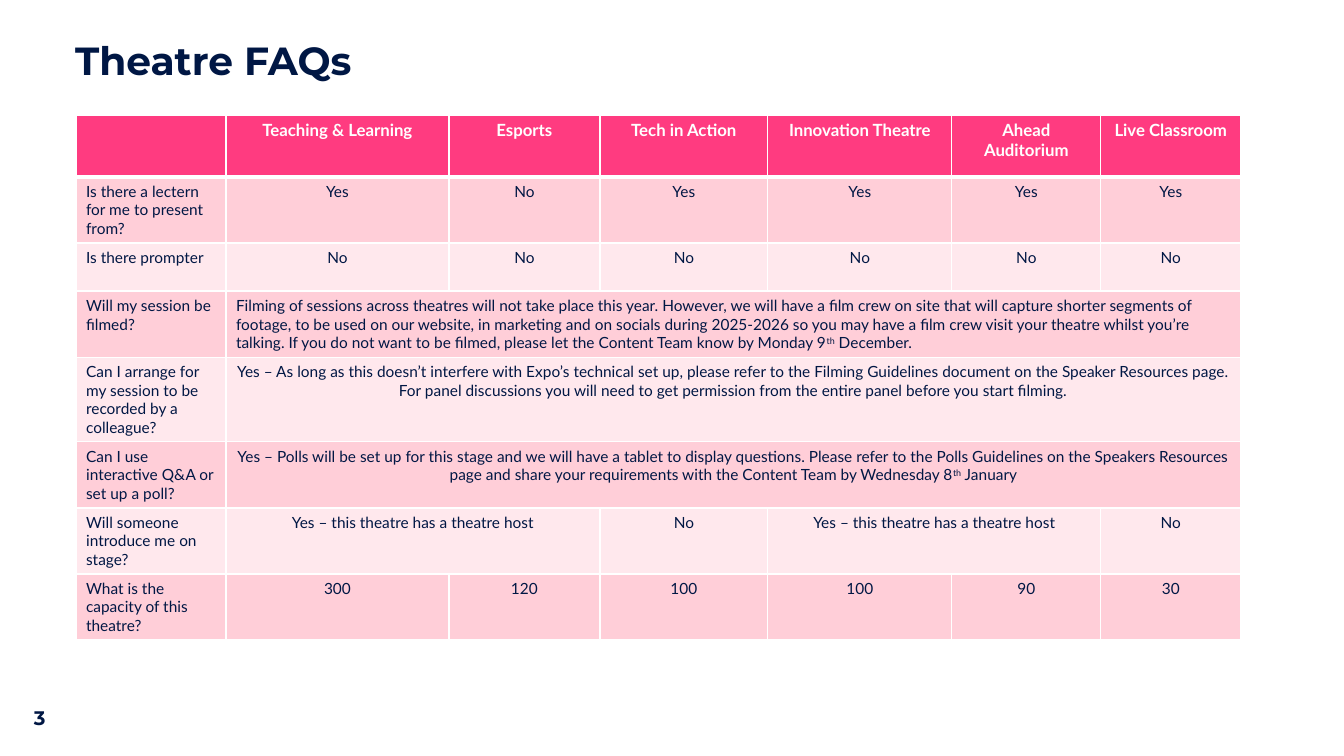
"""Build the Theatre FAQs slide with its table of theatre facilities."""
from dataclasses import dataclass

import lxml.etree
import pptx
import pptx.dml.color
import pptx.enum.text
import pptx.oxml.ns
import pptx.util

PX = 914400 / 100.8
COLORS = {
    "navy": "001744",
    "white": "FFFFFF",
    "header": "FF3B80",
    "odd": "FFCED8",
    "even": "FFE8ED",
}
LEFT = pptx.enum.text.PP_ALIGN.LEFT
CENTER = pptx.enum.text.PP_ALIGN.CENTER
COLUMN_WIDTHS = [150, 223, 151, 168, 184, 149, 140]
HOST = "Yes – this theatre has a theatre host"


@dataclass
class Answer:
    text: str
    span: int = 1
    align: pptx.enum.text.PP_ALIGN = CENTER


@dataclass
class Row:
    height: int
    label: str
    answers: list[Answer]


def singles(*texts: str) -> list[Answer]:
    return [Answer(text) for text in texts]


ROWS = [
    Row(62, "", singles("Teaching & Learning", "Esports", "Tech in Action",
                        "Innovation Theatre", "Ahead Auditorium", "Live Classroom")),
    Row(66, "Is there a lectern for me to present from?",
        singles("Yes", "No", "Yes", "Yes", "Yes", "Yes")),
    Row(48, "Is there prompter", singles(*["No"] * 6)),
    Row(64, "Will my session be filmed?", [Answer(
        "Filming of sessions across theatres will not take place this year. However, "
        "we will have a film crew on site that will capture shorter segments of footage, "
        "to be used on our website, in marketing and on socials during 2025-2026 so you "
        "may have a film crew visit your theatre whilst you’re talking. If you do not want "
        "to be filmed, please let the Content Team know by Monday 9^th^ December.", 6, LEFT)]),
    Row(84, "Can I arrange for my session to be recorded by a colleague?", [Answer(
        "Yes – As long as this doesn’t interfere with Expo’s technical set up, please refer "
        "to the Filming Guidelines document on the Speaker Resources page. For panel "
        "discussions you will need to get permission from the entire panel before you "
        "start filming.", 6)]),
    Row(66, "Can I use interactive Q&A or set up a poll?", [Answer(
        "Yes – Polls will be set up for this stage and we will have a tablet to display "
        "questions. Please refer to the Polls Guidelines on the Speakers Resources page and "
        "share your requirements with the Content Team by Wednesday 8^th^ January", 6)]),
    Row(66, "Will someone introduce me on stage?",
        [Answer(HOST, 2), Answer("No"), Answer(HOST, 2), Answer("No")]),
    Row(65, "What is the capacity of this theatre?",
        singles("300", "120", "100", "100", "90", "30")),
]


def px(value: int) -> int:
    return round(value * PX)


def rgb(name: str) -> pptx.dml.color.RGBColor:
    return pptx.dml.color.RGBColor.from_string(COLORS[name])


def write(tf, text: str, *, size: int, font: str = "Lato", color: str = "navy",
          bold: bool = False, align=LEFT, spacing: float | None = None) -> None:
    """Write one paragraph, raising the parts set between carets."""
    p = tf.paragraphs[0]
    p.alignment = align
    if spacing:
        p.line_spacing = spacing
    for i, part in enumerate(text.split("^")):
        r = p.add_run()
        r.text = part
        r.font.name = font
        r.font.size = pptx.util.Pt(size)
        r.font.bold = bold
        r.font.color.rgb = rgb(color)
        if i % 2:
            r.font._element.set("baseline", "30000")


def set_borders(cell, top: int, bottom: int) -> None:
    """Give a cell white borders with the given top and bottom widths in points."""
    tc_pr = cell._tc.get_or_add_tcPr()
    widths = {"a:lnL": 1, "a:lnR": 1, "a:lnT": top, "a:lnB": bottom}
    for i, (tag, width) in enumerate(widths.items()):
        ln = lxml.etree.Element(pptx.oxml.ns.qn(tag), w=str(pptx.util.Pt(width)))
        fill = lxml.etree.SubElement(ln, pptx.oxml.ns.qn("a:solidFill"))
        lxml.etree.SubElement(fill, pptx.oxml.ns.qn("a:srgbClr"), val=COLORS["white"])
        tc_pr.insert(i, ln)


def add_faq_table(s) -> None:
    table = s.shapes.add_table(
        len(ROWS), len(COLUMN_WIDTHS), px(76), px(115),
        px(sum(COLUMN_WIDTHS)), px(sum(row.height for row in ROWS))).table
    table.horz_banding = False
    for column, width in zip(table.columns, COLUMN_WIDTHS):
        column.width = px(width)
    for i, row in enumerate(ROWS):
        table.rows[i].height = px(row.height)
        header = i == 0
        for cell in table.rows[i].cells:
            cell.fill.solid()
            cell.fill.fore_color.rgb = rgb("header" if header else "odd" if i % 2 else "even")
            set_borders(cell, 3 if i == 1 else 1, 3 if header else 1)
        column = 0
        for answer in [Answer(row.label, align=LEFT), *row.answers]:
            cell = table.cell(i, column)
            if answer.span > 1:
                cell.merge(table.cell(i, column + answer.span - 1))
            if answer.text:
                write(cell.text_frame, answer.text, size=12 if header else 11,
                      color="white" if header else "navy", bold=header, align=answer.align)
            column += answer.span


def add_title(s) -> None:
    sp = s.shapes.title
    sp.left, sp.top, sp.width, sp.height = px(65), px(37), px(798), px(73)
    tf = sp.text_frame
    tf.auto_size = pptx.enum.text.MSO_AUTO_SIZE.NONE
    tf.vertical_anchor = pptx.enum.text.MSO_ANCHOR.TOP
    write(tf, "Theatre FAQs", size=28, font="Montserrat", bold=True, spacing=0.9)


def add_page_number(s) -> None:
    tf = s.shapes.add_textbox(px(24), px(701), px(45), px(34)).text_frame
    tf.word_wrap = True
    write(tf, "3", size=14, font="Montserrat", bold=True)


def main() -> None:
    prs = pptx.Presentation()
    prs.slide_width, prs.slide_height = px(1344), px(756)
    s = prs.slides.add_slide(prs.slide_layouts[5])
    add_title(s)
    add_faq_table(s)
    add_page_number(s)
    prs.save("out.pptx")


if __name__ == "__main__":
    main()
